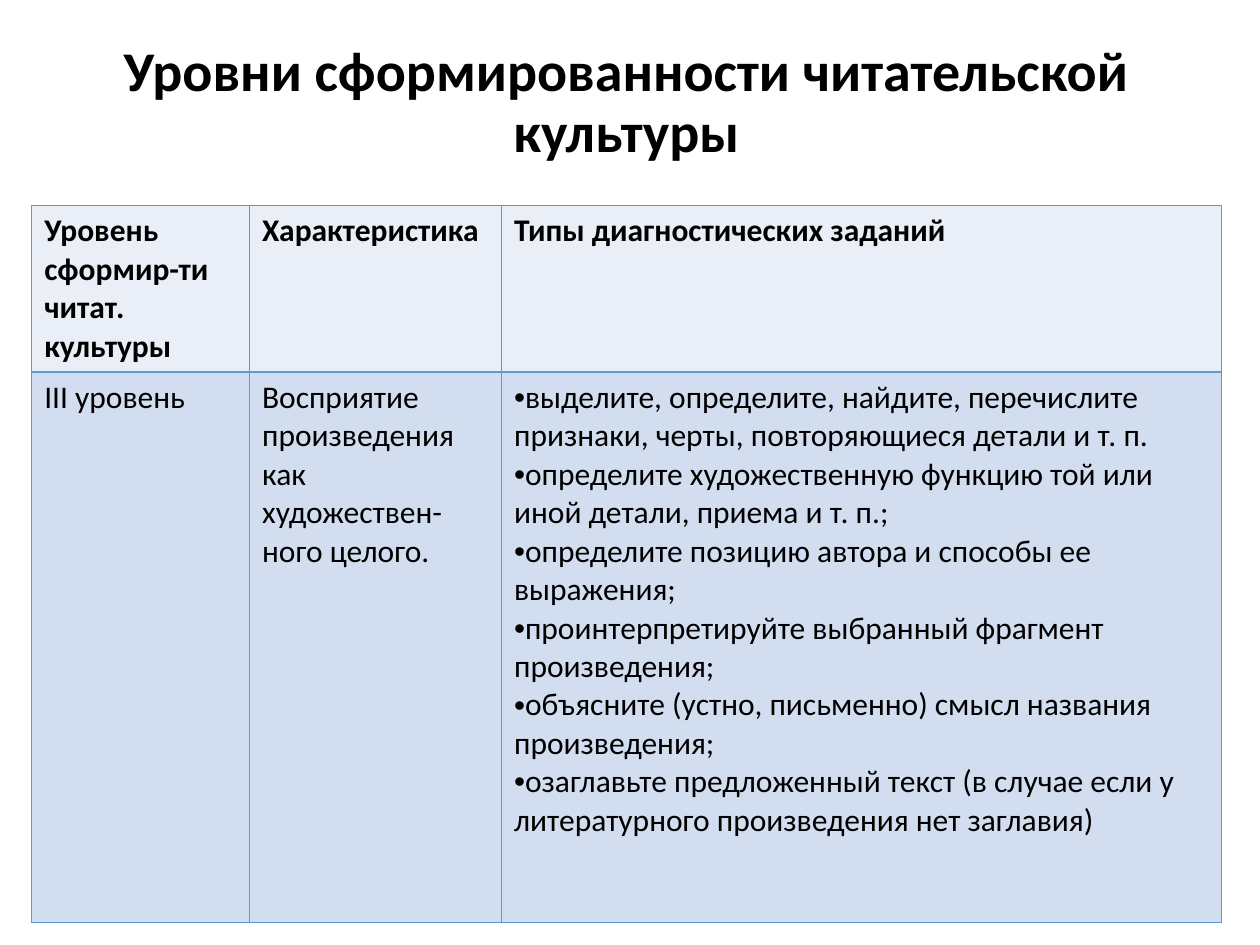
from dataclasses import dataclass

from lxml.etree import SubElement
from pptx import Presentation
from pptx.dml.color import RGBColor
from pptx.enum.text import MSO_ANCHOR, MSO_AUTO_SIZE, PP_ALIGN
from pptx.oxml.ns import qn
from pptx.util import Cm, Pt


@dataclass(frozen=True)
class Theme:
    font: str = "Calibri"
    title_size: int = 32
    body_size: int = 18
    border_width: int = 1
    text: str = "000000"
    panel: str = "FFFFFF"
    panel_opacity: int = 67
    border: str = "5B9BD5"
    header_fill: str = "EAEFF7"
    body_fill: str = "D2DEEF"


THEME = Theme()
TITLE = "Уровни сформированности читательской культуры"
HEADERS = [
    "Уровень сформир-ти читат. культуры",
    "Характеристика",
    "Типы диагностических заданий",
]
LEVEL = "III уровень"
CHARACTERISTIC = "Восприятие произведения как художествен-ного целого."
TASKS = [
    "выделите, определите, найдите, перечислите признаки, черты, повторяющиеся детали и т. п.",
    "определите художественную функцию той или иной детали, приема и т. п.;",
    "определите позицию автора и способы ее выражения;",
    "проинтерпретируйте выбранный фрагмент произведения;",
    "объясните (устно, письменно) смысл названия произведения;",
    "озаглавьте предложенный текст (в случае если у литературного произведения нет заглавия)",
]
COLUMN_WIDTHS = [4.39, 5.08, 14.51]
ROW_HEIGHTS = [3.36, 11.1]


def write_text(text_frame, lines, size=THEME.body_size, bold=False,
               bullet=None, align=PP_ALIGN.LEFT, line_spacing=1.0):
    text_frame.word_wrap = True
    for index, line in enumerate(lines):
        paragraph = text_frame.add_paragraph() if index else text_frame.paragraphs[0]
        paragraph.alignment = align
        paragraph.line_spacing = line_spacing
        paragraph.space_before = paragraph.space_after = Pt(0)
        if bullet:
            properties = paragraph._p.get_or_add_pPr()
            SubElement(properties, qn("a:buFont"), typeface="Arial")
            SubElement(properties, qn("a:buChar"), char=bullet)
        run = paragraph.add_run()
        run.text = line
        run.font.name = THEME.font
        run.font.size = Pt(size)
        run.font.bold = bold
        run.font.color.rgb = RGBColor.from_string(THEME.text)


def add_border(cell):
    properties = cell._tc.get_or_add_tcPr()
    for position, side in enumerate(("a:lnL", "a:lnR", "a:lnT", "a:lnB")):
        line = properties.makeelement(qn(side), {"w": str(Pt(THEME.border_width))})
        fill = SubElement(line, qn("a:solidFill"))
        SubElement(fill, qn("a:srgbClr"), val=THEME.border)
        properties.insert(position, line)


def place_title(slide, left, top, width, height):
    title = slide.shapes.title
    title.left, title.top, title.width, title.height = left, top, width, height
    title.fill.solid()
    title.fill.fore_color.rgb = RGBColor.from_string(THEME.panel)
    color = title._element.spPr.find(qn("a:solidFill")).find(qn("a:srgbClr"))
    SubElement(color, qn("a:alpha"), val=str(THEME.panel_opacity * 1000))
    title.text_frame.auto_size = MSO_AUTO_SIZE.NONE
    title.text_frame.vertical_anchor = MSO_ANCHOR.MIDDLE
    write_text(title.text_frame, [TITLE], size=THEME.title_size, bold=True,
               align=PP_ALIGN.CENTER, line_spacing=0.9)


def place_table(slide, left, top, width, height):
    table = slide.shapes.add_table(
        len(ROW_HEIGHTS), len(COLUMN_WIDTHS), left, top, width, height).table
    for column, share in zip(table.columns, COLUMN_WIDTHS):
        column.width = int(width * share / sum(COLUMN_WIDTHS))
    for row, share in zip(table.rows, ROW_HEIGHTS):
        row.height = int(height * share / sum(ROW_HEIGHTS))
    for cell in table.iter_cells():
        cell.fill.solid()
        cell.fill.fore_color.rgb = RGBColor.from_string(THEME.body_fill)
        add_border(cell)
    for cell, header in zip(table.rows[0].cells, HEADERS):
        cell.fill.fore_color.rgb = RGBColor.from_string(THEME.header_fill)
        write_text(cell.text_frame, [header], bold=True)
    level, characteristic, tasks = table.rows[1].cells
    write_text(level.text_frame, [LEVEL])
    write_text(characteristic.text_frame, [CHARACTERISTIC])
    write_text(tasks.text_frame, TASKS, bullet="•")


def main():
    presentation = Presentation()
    presentation.slide_width, presentation.slide_height = Cm(25.4), Cm(19.05)
    slide = presentation.slides.add_slide(presentation.slide_layouts[5])
    left, width = Cm(0.64), Cm(23.98)
    place_title(slide, left, Cm(0.56), width, Cm(3.07))
    place_table(slide, left, Cm(4.14), width, Cm(sum(ROW_HEIGHTS)))
    presentation.save("out.pptx")


if __name__ == "__main__":
    main()
